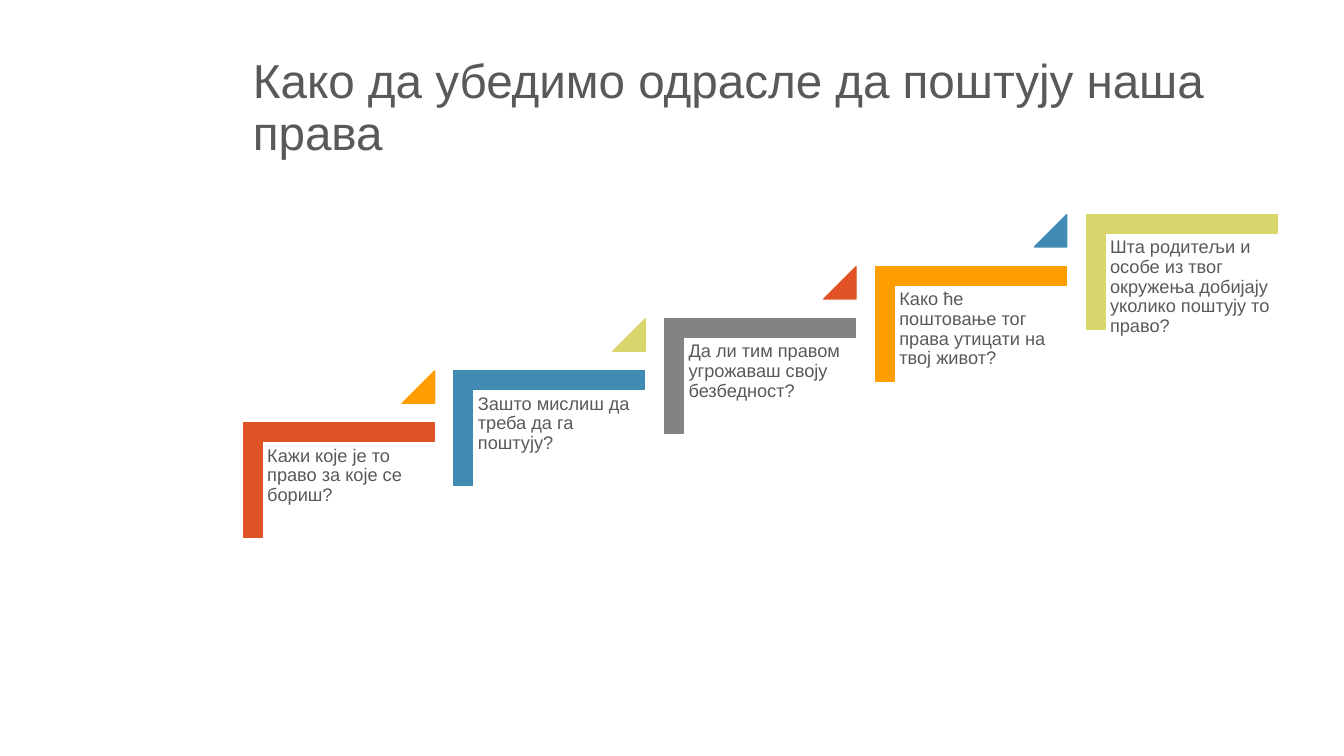
import dataclasses

import pptx
import pptx.dml.color
import pptx.enum.shapes
import pptx.enum.text
import pptx.util

Inches = pptx.util.Inches
SHAPES = pptx.enum.shapes.MSO_SHAPE
ANCHOR = pptx.enum.text.MSO_ANCHOR


@dataclasses.dataclass(frozen=True)
class Theme:
    font: str = "Arial"
    ink: str = "595959"
    red: str = "DF5327"
    orange: str = "FE9E00"
    blue: str = "418AB3"
    lime: str = "D9D66D"
    gray: str = "838383"
    title_size: int = 34
    step_size: int = 13
    line_spacing: float = 0.9
    outline: float = 1


def write_text(frame, text, *, font, size, color, spacing):
    para = frame.paragraphs[0]
    para.line_spacing = spacing
    span = para.add_run()
    span.text = text
    span.font.name = font
    span.font.size = pptx.util.Pt(size)
    span.font.color.rgb = pptx.dml.color.RGBColor.from_string(color)


class SlideBuilder:
    def __init__(self, page, theme):
        self.page = page
        self.theme = theme

    def text(self, shapes, text, bounds, size, inset, anchor=ANCHOR.TOP):
        box = shapes.add_textbox(*map(Inches, bounds))
        frame = box.text_frame
        frame.word_wrap = True
        frame.vertical_anchor = anchor
        frame.margin_left = frame.margin_right = Inches(inset)
        frame.margin_top = frame.margin_bottom = Inches(0.05)
        write_text(frame, text, font=self.theme.font, size=size,
                   color=self.theme.ink, spacing=self.theme.line_spacing)

    def shape(self, shapes, kind, bounds, color, adjustments, rotation=0):
        shape = shapes.add_shape(kind, *map(Inches, bounds))
        shape.shadow.inherit = False
        shape.rotation = rotation
        for index, value in enumerate(adjustments):
            shape.adjustments[index] = value
        rgb = pptx.dml.color.RGBColor.from_string(color)
        shape.fill.solid()
        shape.fill.fore_color.rgb = rgb
        shape.line.color.rgb = rgb
        shape.line.width = pptx.util.Pt(self.theme.outline)

    def step(self, shapes, left, top, text, color):
        self.shape(shapes, SHAPES.CORNER, (left + 0.19, top - 0.56, 1.14, 1.89),
                   color, (0.161, 0.161), rotation=90)
        self.text(shapes, text, (left, top, 1.71, 1.5), self.theme.step_size, 0.05)

    def marker(self, shapes, left, top, color):
        self.shape(shapes, SHAPES.ISOSCELES_TRIANGLE, (left, top, 0.32, 0.32),
                   color, (1,))


def main():
    deck = pptx.Presentation()
    deck.slide_width, deck.slide_height = Inches(13.33), Inches(7.5)
    page = deck.slides.add_slide(deck.slide_layouts[6])
    theme = Theme()
    builder = SlideBuilder(page, theme)
    builder.text(page.shapes, "Како да убедимо одрасле да поштују наша права",
                 (2.41, 0.33, 10.25, 1.31), theme.title_size, 0.1, ANCHOR.BOTTOM)

    steps = [
        ("Кажи које је то право за које се бориш?", theme.red, theme.orange),
        ("Зашто мислиш да треба да га поштују?", theme.blue, theme.lime),
        ("Да ли тим правом угрожаваш своју безбедност?", theme.gray, theme.red),
        ("Како ће поштовање тог права утицати на твој живот?", theme.orange, theme.blue),
        ("Шта родитељи и особе из твог окружења добијају уколико поштују то право?",
         theme.lime, None),
    ]
    staircase = page.shapes.add_group_shape().shapes
    for index, (text, color, marker_color) in enumerate(steps):
        left = 2.6 + 2.09 * index
        top = 4.38 - 0.517 * index
        builder.step(staircase, left, top, text, color)
        if marker_color:
            builder.marker(staircase, left + 1.39, top - 0.7, marker_color)
    deck.save("out.pptx")


if __name__ == "__main__":
    main()
